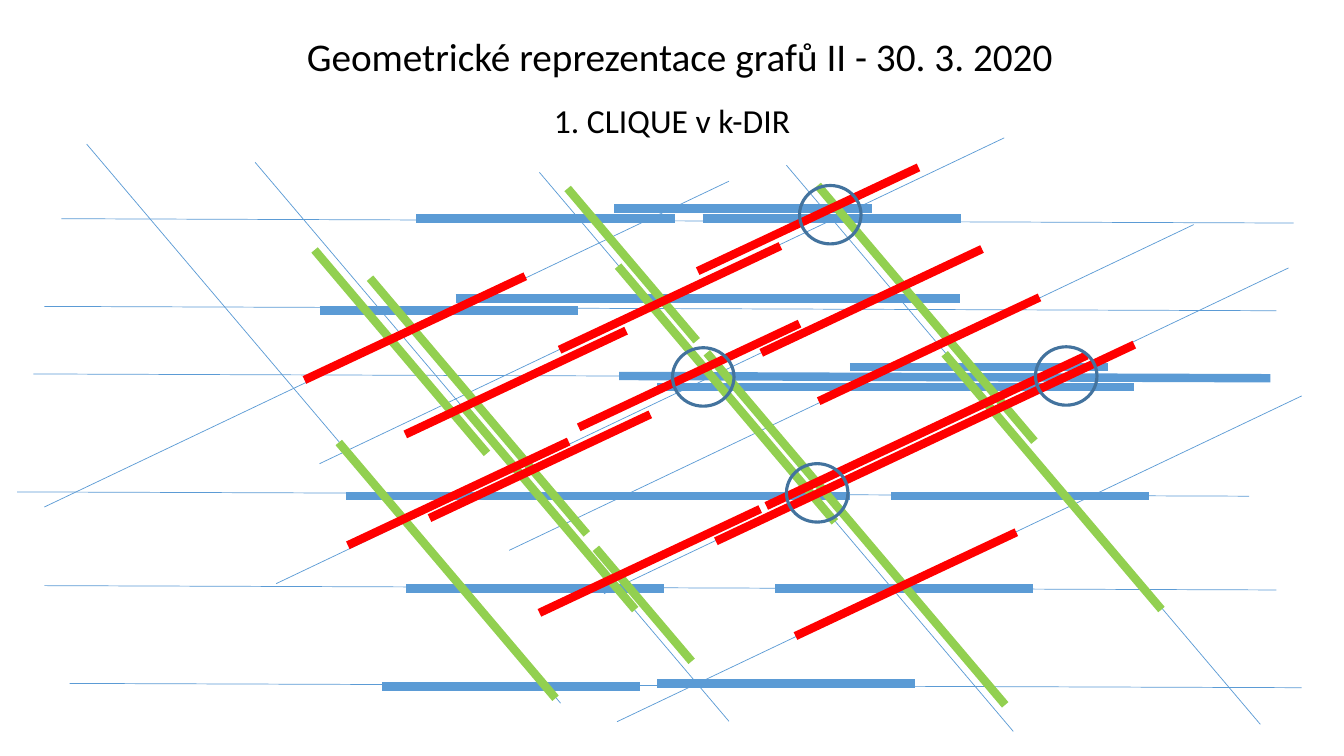
import pptx
import pptx.util
import pptx.dml.color
import pptx.enum.shapes
import pptx.enum.text
import pptx.oxml.ns
import lxml.etree

Inches = pptx.util.Inches
Pt = pptx.util.Pt

COLORS = {"blue": "5B9BD5", "green": "92D050", "red": "FF0000",
          "circle": "43739E", "text": "000000"}


def rgb(name):
    return pptx.dml.color.RGBColor.from_string(COLORS[name])


def add_segment(slide, x, y, length, slope, color, width):
    connector = slide.shapes.add_connector(
        pptx.enum.shapes.MSO_CONNECTOR.STRAIGHT,
        Inches(x), Inches(y), Inches(x + length), Inches(y + slope * length))
    connector.line.color.rgb = rgb(color)
    connector.line.width = Pt(width)
    lxml.etree.SubElement(connector._element.spPr, pptx.oxml.ns.qn("a:effectLst"))


presentation = pptx.Presentation()
presentation.slide_width = Inches(13.33)
presentation.slide_height = Inches(7.5)
slide = presentation.slides.add_slide(presentation.slide_layouts[6])

guide_families = [
    (6.79, -0.476, [(3.17, 4.6), (2.74, 5.79), (5.05, 5.46),
                    (5.99, 5.89), (0.44, 5.03), (6.12, 7.16)]),
    (4.7, 1.18, [(2.53, 1.61), (0.86, 1.43), (5.35, 1.71), (7.8, 1.64)]),
    (12.22, 0.0035, [(0.69, 6.78), (0.44, 5.81), (0.17, 4.88),
                     (0.33, 3.71), (0.44, 3.04), (0.61, 2.17)]),
]
for length, slope, starts in guide_families:
    for x, y in starts:
        add_segment(slide, x, y, length, slope, "blue", 0.5)

segment_families = [
    ("blue", 0, [
        (4.13, 2.17, 2.56), (6.97, 2.17, 2.56), (6.09, 2.07, 2.56),
        (3.17, 3.08, 2.56), (6.52, 3.84, 4.73), (8.43, 3.64, 2.56),
        (3.43, 4.92, 5), (4.52, 2.96, 5), (8.84, 4.92, 2.56),
        (7.69, 5.84, 2.56), (6.52, 6.78, 2.56), (3.79, 6.81, 2.56),
        (4.03, 5.84, 2.56)]),
    ("blue", 0.0035, [(6.14, 3.73, 6.46)]),
    ("green", 1.18, [
        (3.36, 4.39, 2.15), (3.67, 2.76, 2.15), (6.13, 2.64, 2.15),
        (9.37, 3.51, 2.15), (8.11, 1.84, 2.15), (5.63, 1.87, 1.28),
        (3.12, 2.48, 1.71), (4.59, 4.03, 1.71), (7.01, 3.5, 2.96),
        (5.91, 5.44, 0.95)]),
    ("red", -0.47, [
        (7.89, 6.31, 2.19), (7.1, 5.37, 4.15), (7.6, 5.02, 3.18),
        (8.12, 3.98, 2.19), (7.55, 3.5, 2.19), (5.55, 3.47, 2.19),
        (3.02, 3.77, 2.19), (4.02, 4.31, 2.19), (3.45, 5.41, 2.19),
        (4.26, 5.14, 2.19), (5.74, 4.24, 2.19), (6.92, 2.69, 2.19),
        (5.35, 6.08, 2.19)]),
]
for color, slope, segments in segment_families:
    for x, y, length in segments:
        add_segment(slide, x, y, length, slope, color, 6)

for x, y in [(10.27, 3.44), (7.93, 1.84), (6.67, 3.45), (7.8, 4.6)]:
    circle = slide.shapes.add_shape(
        pptx.enum.shapes.MSO_SHAPE.OVAL,
        Inches(x), Inches(y), Inches(0.61), Inches(0.58))
    circle.shadow.inherit = False
    circle.fill.background()
    circle.line.color.rgb = rgb("circle")
    circle.line.width = Pt(2.25)

anchors = pptx.enum.text.MSO_ANCHOR
headings = [
    ("Geometrické reprezentace grafů II - 30. 3. 2020",
     (1.74, 0.23, 10, 0.61), 28, anchors.BOTTOM, 0),
    ("1. CLIQUE v k-DIR", (0.17, 0.99, 12.99, 6.41), 24, anchors.TOP, 10),
]
for text, box, size, anchor, space_before in headings:
    text_box = slide.shapes.add_textbox(*[Inches(value) for value in box])
    frame = text_box.text_frame
    frame.word_wrap = True
    frame.vertical_anchor = anchor
    paragraph = frame.paragraphs[0]
    paragraph.text = text
    paragraph_format = {"alignment": pptx.enum.text.PP_ALIGN.CENTER,
                        "line_spacing": 0.9, "space_before": Pt(space_before)}
    for name, value in paragraph_format.items():
        setattr(paragraph, name, value)
    font = paragraph.runs[0].font
    font.name = "Calibri"
    font.size = Pt(size)
    font.color.rgb = rgb("text")

presentation.save("out.pptx")
